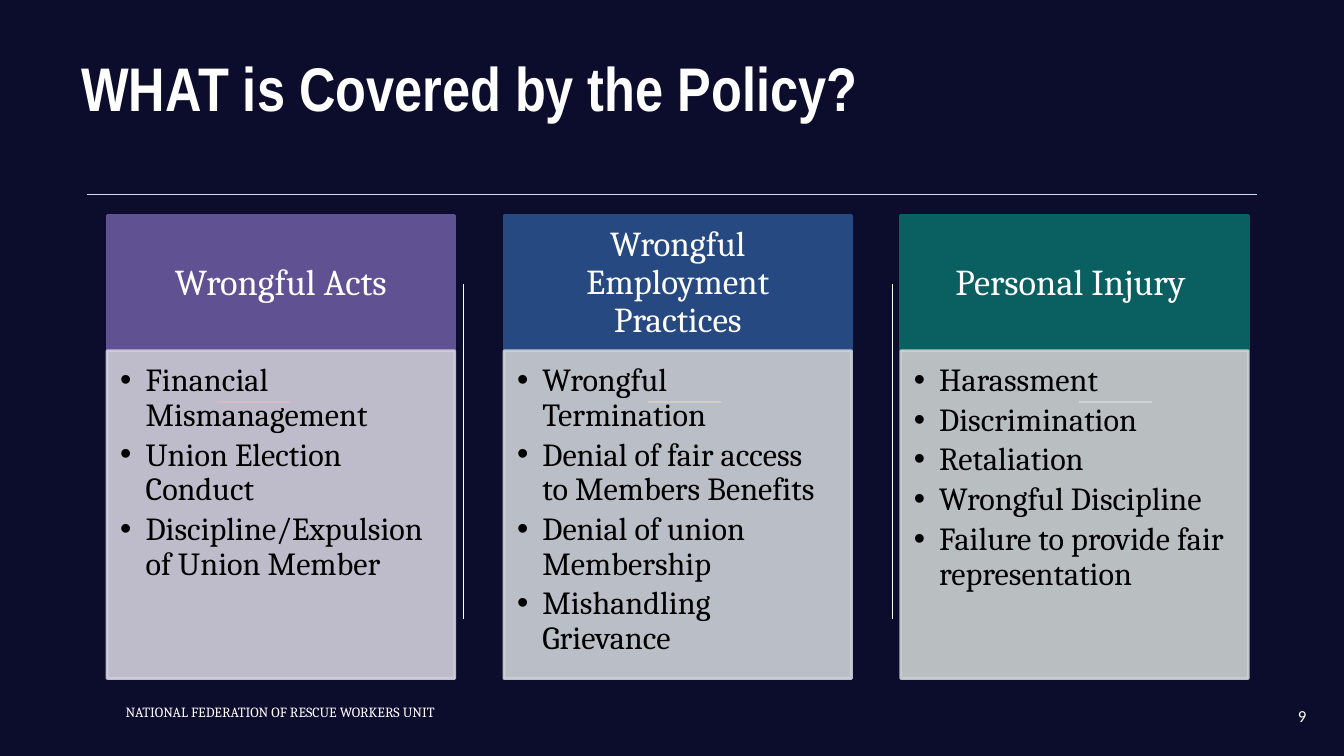
"""Build the policy coverage slide with three headed bullet cards."""
import dataclasses

import lxml.etree
import pptx
import pptx.dml.color
import pptx.enum.shapes
import pptx.enum.text
import pptx.oxml.ns
import pptx.util

Cm = pptx.util.Cm
Pt = pptx.util.Pt
RGB = pptx.dml.color.RGBColor.from_string
ALIGN = pptx.enum.text.PP_ALIGN
ANCHOR = pptx.enum.text.MSO_ANCHOR
qn = pptx.oxml.ns.qn


@dataclasses.dataclass(frozen=True)
class Theme:
    back: str = "0C0C2C"
    light: str = "FFFFFF"
    dark: str = "000000"
    rule: str = "CCDDF1"
    accents: tuple = ("EE0000", "FFB339", "CCDDF1")
    heads: tuple = ("5F5192", "264981", "0A5F61")
    cards: tuple = ("D2D0DC", "CED2D7", "CCD2D2")
    head_sizes: tuple = (26, 25, 26)
    title: int = 44
    bullet: int = 23
    footer: int = 10
    number: int = 12
    serif: str = "Cambria"
    narrow: str = "Arial Narrow"
    sans: str = "Calibri"


def write(sp, *texts, size, color=Theme.light, font=Theme.serif, bold=False, align=ALIGN.LEFT,
          anchor=ANCHOR.TOP, insets=(0.25, 0.13, 0.25, 0.13), spacing=1.0, after=0, bullet=False):
    tf = sp.text_frame
    tf.word_wrap = True
    tf.vertical_anchor = anchor
    tf.margin_left, tf.margin_top, tf.margin_right, tf.margin_bottom = map(Cm, insets)
    for i, text in enumerate(texts):
        p = tf.add_paragraph() if i else tf.paragraphs[0]
        p.alignment, p.line_spacing, p.space_after = align, spacing, Pt(after)
        r = p.add_run()
        r.text = text
        r.font.name, r.font.size, r.font.bold = font, Pt(size), bold
        r.font.color.rgb = RGB(color)
        if bullet:
            pPr = p._p.get_or_add_pPr()
            pPr.set("marL", str(Cm(0.64)))
            pPr.set("indent", str(-Cm(0.64)))
            lxml.etree.SubElement(pPr, qn("a:buFont"), typeface="Arial")
            lxml.etree.SubElement(pPr, qn("a:buChar"), char="•")


def draw_line(x1, y1, x2, y2, color, width=0.75):
    cx = s.shapes.add_connector(pptx.enum.shapes.MSO_CONNECTOR.STRAIGHT, Cm(x1), Cm(y1), Cm(x2), Cm(y2))
    cx.line.color.rgb = RGB(color)
    cx.line.width = Pt(width)
    lxml.etree.SubElement(cx._element.spPr, qn("a:effectLst"))


theme = Theme()
prs = pptx.Presentation()
prs.slide_width, prs.slide_height = Cm(33.87), Cm(19.05)
s = prs.slides.add_slide(prs.slide_layouts[6])
s.background.fill.solid()
s.background.fill.fore_color.rgb = RGB(theme.back)

for x in (11.68, 22.5):
    draw_line(x, 7.16, x, 15.6, theme.light)
draw_line(2.18, 4.9, 31.67, 4.9, theme.rule)
for i, color in enumerate(theme.accents):
    x = 5.46 + 10.86 * i
    draw_line(x, 10.13, x + 1.85, 10.13, color, 1)

title = s.shapes.add_textbox(Cm(1.8), Cm(1.12), Cm(29.7), Cm(2.03))
write(title, "WHAT is Covered by the Policy?", size=theme.title, font=theme.narrow, bold=True)
footer = s.shapes.add_textbox(Cm(2.92), Cm(17.65), Cm(21.87), Cm(0.64))
write(footer, "NATIONAL FEDERATION OF RESCUE WORKERS UNIT", size=theme.footer, spacing=0.9)
number = s.shapes.add_textbox(Cm(25.55), Cm(17.53), Cm(7.62), Cm(1.02))
write(number, "9", size=theme.number, font=theme.sans, align=ALIGN.RIGHT, anchor=ANCHOR.MIDDLE)

coverage = {
    "Wrongful Acts": (
        "Financial Mismanagement", "Union Election Conduct", "Discipline/Expulsion of Union Member"),
    "Wrongful Employment Practices": (
        "Wrongful Termination", "Denial of fair access to Members Benefits",
        "Denial of union Membership", "Mishandling Grievance"),
    "Personal Injury ": (
        "Harassment", "Discrimination", "Retaliation", "Wrongful Discipline",
        "Failure to provide fair representation"),
}
for i, (heading, items) in enumerate(coverage.items()):
    boxes = []
    for top, height, color in ((5.44, 3.4, theme.heads[i]), (8.84, 8.26, theme.cards[i])):
        sp = s.shapes.add_shape(pptx.enum.shapes.MSO_SHAPE.RECTANGLE,
                                Cm(2.7 + 10 * i), Cm(top), Cm(8.76), Cm(height))
        sp.shadow.inherit = False
        sp.fill.solid()
        sp.fill.fore_color.rgb = sp.line.color.rgb = RGB(color)
        sp.line.width = Pt(2)
        boxes.append(sp)
    head, card = boxes
    for clr in card._element.spPr.iter(qn("a:srgbClr")):
        lxml.etree.SubElement(clr, qn("a:alpha"), val="90000")
    write(head, heading, size=theme.head_sizes[i], align=ALIGN.CENTER, anchor=ANCHOR.MIDDLE,
          insets=(0.5, 0.3, 0.5, 0.3), spacing=0.9)
    write(card, *items, size=theme.bullet, color=theme.dark, insets=(0.33, 0.33, 0.46, 0.5),
          spacing=0.9, after=3.5, bullet=True)

prs.save("out.pptx")
